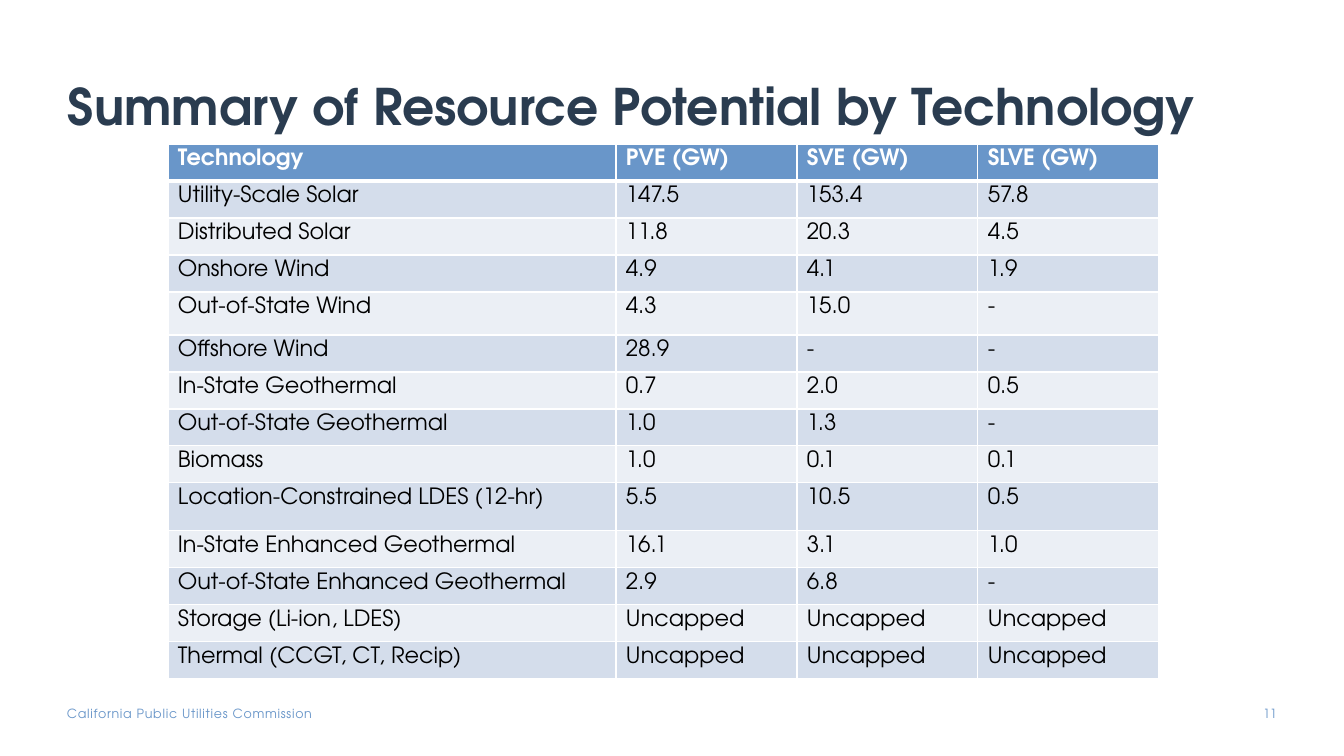
from lxml import etree
from pptx import Presentation
from pptx.dml.color import RGBColor
from pptx.enum.text import MSO_ANCHOR, PP_ALIGN
from pptx.oxml.ns import qn
from pptx.util import Pt

LEFT, RIGHT = PP_ALIGN.LEFT, PP_ALIGN.RIGHT
TOP, BOTTOM = MSO_ANCHOR.TOP, MSO_ANCHOR.BOTTOM
PX = 914400 / 100.8  # EMU per px

THEME = {
    "font": "TeX Gyre Adventor",
    "navy": "2A3C50", "blue": "6996C9", "white": "FFFFFF", "black": "000000",
    "bands": ["D4DDEB", "EBEFF5"],
    "title": 36, "table": 16, "footer": 9,
}


def px(n):
    return round(n * PX)


def write(tf, text, size, color, bold=False, align=LEFT):
    p = tf.paragraphs[0]
    p.alignment = align
    r = p.add_run()
    r.text = text
    for name, value in {"name": THEME["font"], "size": Pt(size), "bold": bold}.items():
        setattr(r.font, name, value)
    r.font.color.rgb = RGBColor.from_string(THEME[color])
    return r


prs = Presentation()
prs.slide_width, prs.slide_height = px(1344), px(756)
s = prs.slides.add_slide(prs.slide_layouts[5])

# Title
title = s.shapes.title
title.left, title.top, title.width, title.height = px(68), px(75), px(1210), px(66)
tf = title.text_frame
frame = {"margin_left": 0, "margin_right": px(10), "margin_top": px(5),
         "margin_bottom": px(5), "vertical_anchor": BOTTOM, "word_wrap": True}
for name, value in frame.items():
    setattr(tf, name, value)
write(tf, "Summary of Resource Potential by Technology", THEME["title"], "navy", True)
tf.paragraphs[0].line_spacing = 0.9

# Table of resource potential
ROWS = [
    ("Technology", "PVE (GW)", "SVE (GW)", "SLVE (GW)"),
    ("Utility-Scale Solar", "147.5", "153.4", "57.8"),
    ("Distributed Solar", "11.8", "20.3", "4.5"),
    ("Onshore Wind", "4.9", "4.1", "1.9"),
    ("Out-of-State Wind", "4.3", "15.0", "-"),
    ("Offshore Wind", "28.9", "-", "-"),
    ("In-State Geothermal", "0.7", "2.0", "0.5"),
    ("Out-of-State Geothermal", "1.0", "1.3", "-"),
    ("Biomass", "1.0", "0.1", "0.1"),
    ("Location-Constrained LDES (12-hr)", "5.5", "10.5", "0.5"),
    ("In-State Enhanced Geothermal", "16.1", "3.1", "1.0"),
    ("Out-of-State Enhanced Geothermal", "2.9", "6.8", "-"),
    ("Storage (Li-ion, LDES)", "Uncapped", "Uncapped", "Uncapped"),
    ("Thermal (CCGT, CT, Recip)", "Uncapped", "Uncapped", "Uncapped"),
]
COLUMN_WIDTHS = [448, 181, 181, 181]
ROW_HEIGHT, TALL_ROWS = 37, {4: 43, 9: 48}
CELL_FORMAT = {"margin_left": px(10), "margin_right": px(10), "margin_top": px(5),
               "margin_bottom": px(5), "vertical_anchor": TOP}
heights = [TALL_ROWS.get(i, ROW_HEIGHT) for i in range(len(ROWS))]

table = s.shapes.add_table(len(ROWS), len(COLUMN_WIDTHS), px(168), px(144),
                           px(sum(COLUMN_WIDTHS)), px(sum(heights))).table
for column, width in zip(table.columns, COLUMN_WIDTHS):
    column.width = px(width)

for i, values in enumerate(ROWS):
    table.rows[i].height = px(heights[i])
    header = i == 0
    fill = THEME["blue"] if header else THEME["bands"][(i - 1) % 2]
    for j, value in enumerate(values):
        cell = table.cell(i, j)
        for name, setting in CELL_FORMAT.items():
            setattr(cell, name, setting)
        write(cell.text_frame, value, THEME["table"], "white" if header else "black", header)

        # White cell borders, thicker under the header
        tc_pr = cell._tc.get_or_add_tcPr()
        for side in ("lnL", "lnR", "lnT", "lnB"):
            thick = (i, side) in [(0, "lnB"), (1, "lnT")]
            ln = etree.SubElement(tc_pr, qn("a:" + side), w=str(Pt(3 if thick else 1)))
            solid = etree.SubElement(ln, qn("a:solidFill"))
            etree.SubElement(solid, qn("a:srgbClr"), val=THEME["white"])
        cell.fill.solid()
        cell.fill.fore_color.rgb = RGBColor.from_string(fill)

# Footer and slide number
FOOTER = [
    ("California Public Utilities Commission", 67, 324, 15, LEFT, 50),
    ("11", 1235, 42, 20, RIGHT, 0),
]
for text, left, width, height, align, spacing in FOOTER:
    tf = s.shapes.add_textbox(px(left), px(706), px(width), px(height)).text_frame
    tf.word_wrap = True
    for side in ("left", "right", "top", "bottom"):
        setattr(tf, "margin_" + side, 0)
    r = write(tf, text, THEME["footer"], "blue", align=align)
    r.font._element.set("spc", str(spacing))

prs.save("out.pptx")
